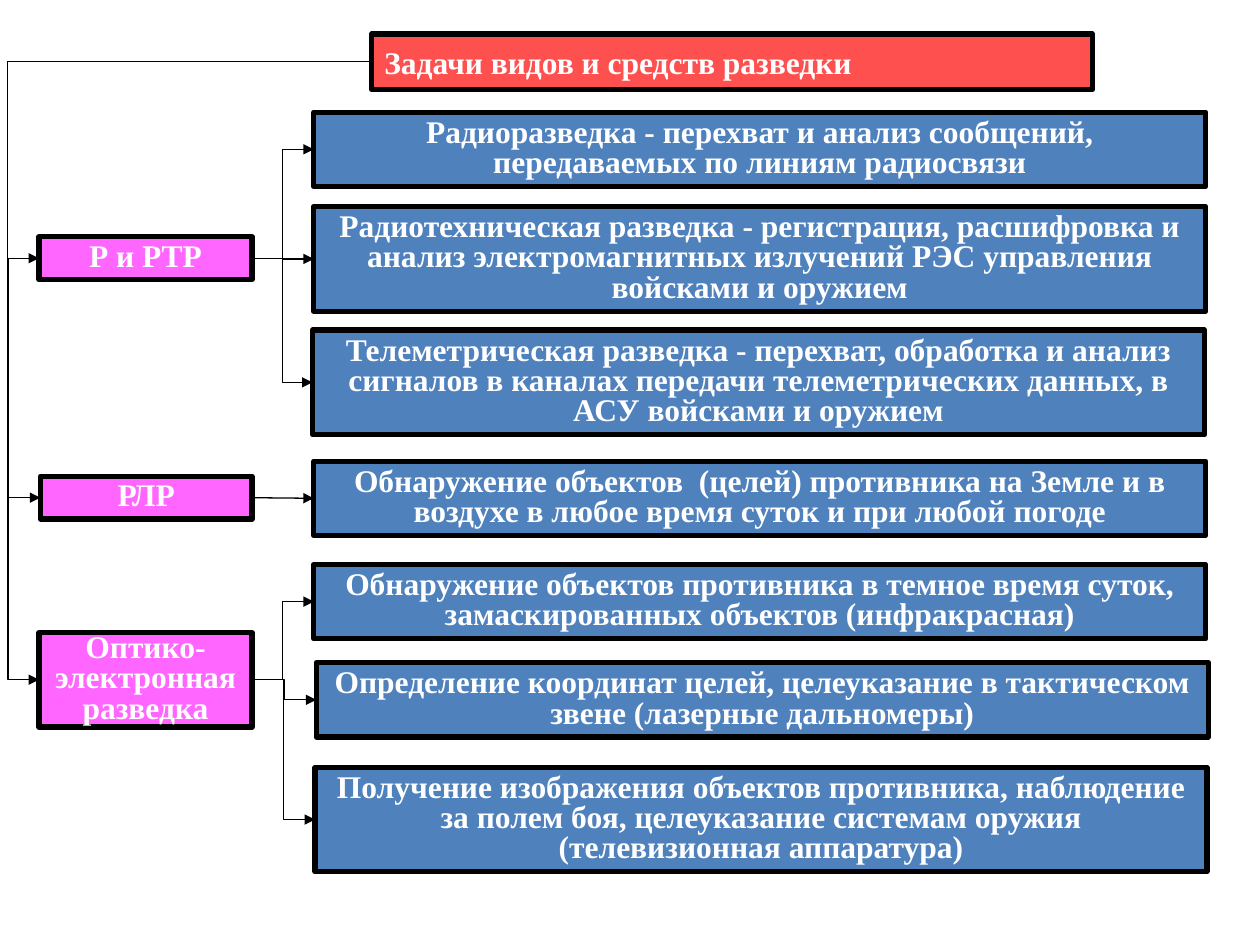
from pptx import Presentation
from pptx.dml.color import RGBColor
from pptx.enum.shapes import MSO_CONNECTOR, MSO_SHAPE
from pptx.enum.text import MSO_ANCHOR, MSO_AUTO_SIZE, PP_ALIGN
from pptx.oxml.ns import qn
from pptx.util import Inches, Pt
from lxml.etree import SubElement

RED = RGBColor(0xFF, 0x50, 0x50)
PINK = RGBColor(0xFF, 0x66, 0xFF)
BLUE = RGBColor(0x4F, 0x81, 0xBD)
BLACK = RGBColor(0, 0, 0)
WHITE = RGBColor(0xFF, 0xFF, 0xFF)

FONT = "Times New Roman"
TOP, LEFT, BOTTOM, RIGHT = range(4)
TRUNK_X = Inches(0.06)
TASK_WIDTH = 7.08
TASK_HEIGHTS = {2: 0.59, 3: 0.83}  # by number of text lines

# Kind of reconnaissance: text, box, then tasks as (left, top, lines, text)
KINDS = [
    ("Р и РТР", (0.31, 1.88, 1.69, 0.34), [
        (2.49, 0.89, 2, "Радиоразведка - перехват и анализ сообщений, "
                        "передаваемых по линиям радиосвязи"),
        (2.49, 1.64, 3, "Радиотехническая разведка - регистрация, расшифровка и "
                        "анализ электромагнитных излучений РЭС управления "
                        "войсками и оружием"),
        (2.48, 2.62, 3, "Телеметрическая разведка - перехват, обработка и анализ "
                        "сигналов в каналах передачи телеметрических данных, в "
                        "АСУ войсками и оружием"),
    ]),
    ("РЛР", (0.32, 3.78, 1.68, 0.34), [
        (2.49, 3.66, 2, "Обнаружение объектов  (целей) противника на Земле и в "
                        "воздухе в любое время суток и при любой погоде"),
    ]),
    ("Оптико-электронная разведка", (0.31, 5.02, 1.69, 0.75), [
        (2.49, 4.48, 2, "Обнаружение объектов противника в темное время суток, "
                        "замаскированных объектов (инфракрасная)"),
        (2.51, 5.26, 2, "Определение координат целей, целеуказание в тактическом "
                        "звене (лазерные дальномеры)"),
        (2.5, 6.09, 3, "Получение изображения объектов противника, наблюдение "
                       "за полем боя, целеуказание системам оружия "
                       "(телевизионная аппаратура)"),
    ]),
]


def format_box(sp, text, fill, align, line_spacing):
    sp.fill.solid()
    sp.fill.fore_color.rgb = fill
    sp.line.color.rgb = BLACK
    sp.line.width = Pt(3)
    tf = sp.text_frame
    tf.word_wrap = True
    tf.auto_size = MSO_AUTO_SIZE.NONE
    tf.vertical_anchor = MSO_ANCHOR.MIDDLE
    p = tf.paragraphs[0]
    p.alignment = align
    p.line_spacing = line_spacing
    r = p.add_run()
    r.text = text
    r.font.name = FONT
    r.font.size = Pt(18)
    r.font.bold = True
    r.font.color.rgb = WHITE


def add_title(s, text):
    sp = s.shapes.title
    sp.left, sp.top, sp.width, sp.height = map(Inches, (2.95, 0.27, 5.72, 0.44))
    format_box(sp, text, RED, PP_ALIGN.LEFT, 1.0)
    return sp


def add_box(s, box, text, fill):
    sp = s.shapes.add_shape(MSO_SHAPE.RECTANGLE, *map(Inches, box))
    sp.shadow.inherit = False
    format_box(sp, text, fill, PP_ALIGN.CENTER, 0.8)
    return sp


def add_kind(s, box, text):
    sp = add_box(s, box, text, PINK)
    tf = sp.text_frame
    tf.margin_left = tf.margin_right = Inches(0.02)
    tf.margin_top = tf.margin_bottom = Inches(0.01)
    return sp


def add_arrow(s, start, start_side, end, kind=MSO_CONNECTOR.ELBOW):
    """Join a side of one box to the left side of another."""
    cxn = s.shapes.add_connector(kind, 0, 0, 0, 0)
    cxn.begin_connect(start, start_side)
    cxn.end_connect(end, LEFT)
    cxn.line.color.rgb = BLACK
    cxn.line.width = Pt(0.75)
    SubElement(cxn.line._get_or_add_ln(), qn("a:tailEnd"), type="triangle")
    SubElement(cxn._element.spPr, qn("a:effectLst"))
    return cxn


def add_trunk_arrow(s, start, end):
    """Join two left sides through the vertical trunk at the slide's edge."""
    cxn = add_arrow(s, start, LEFT, end)
    bend = (TRUNK_X - cxn.begin_x) / (cxn.end_x - cxn.begin_x)
    guides = cxn._element.spPr.find(qn("a:prstGeom")).get_or_add_avLst()
    SubElement(guides, qn("a:gd"), name="adj1", fmla=f"val {round(bend * 100000)}")


def main():
    prs = Presentation()
    prs.slide_width, prs.slide_height = Inches(10), Inches(7.5)
    s = prs.slides.add_slide(prs.slide_layouts[5])

    previous = add_title(s, "Задачи видов и средств разведки")
    for name, box, tasks in KINDS:
        kind = add_kind(s, box, name)
        add_trunk_arrow(s, previous, kind)
        route = MSO_CONNECTOR.ELBOW if len(tasks) > 1 else MSO_CONNECTOR.STRAIGHT
        for left, top, lines, text in tasks:
            task = add_box(s, (left, top, TASK_WIDTH, TASK_HEIGHTS[lines]), text, BLUE)
            add_arrow(s, kind, RIGHT, task, route)
        previous = kind

    prs.save("out.pptx")


if __name__ == "__main__":
    main()
